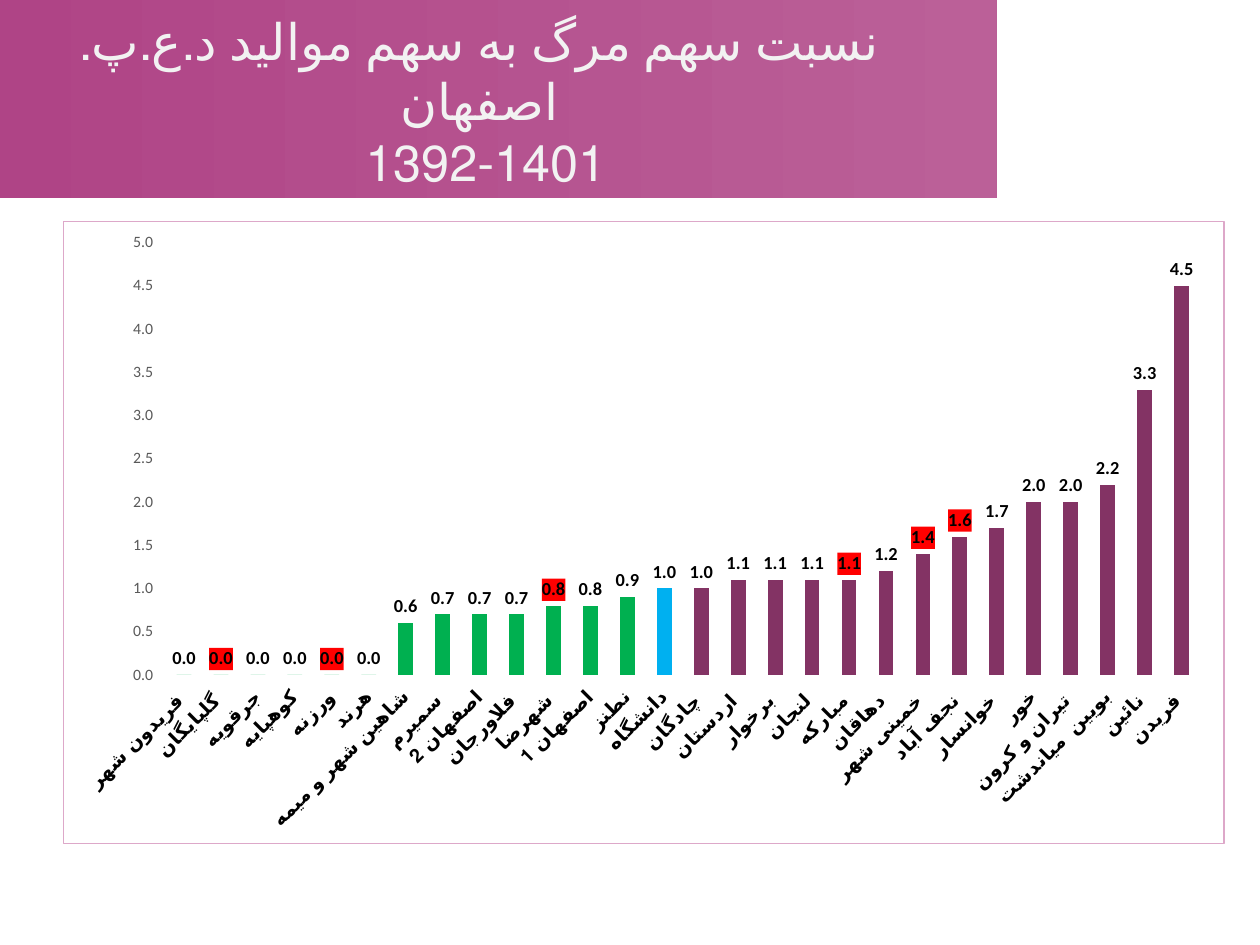
"""Build a slide with a title band and a column chart of death share to birth share by county."""
import lxml.etree
import pptx
import pptx.chart.data
import pptx.dml.color
import pptx.enum.chart
import pptx.enum.lang
import pptx.enum.shapes
import pptx.enum.text
import pptx.oxml
import pptx.oxml.ns
import pptx.util
from pptx.util import Inches

TITLE = "نسبت سهم مرگ به سهم موالید د.ع.پ.\vاصفهان\v1401-1392 \v"
UNIVERSITY = "دانشگاه"
RATIOS = [
    ("فریدون شهر ", 0), ("گلپایگان ", 0), ("جرقویه", 0), ("کوهپایه", 0),
    ("ورزنه", 0), ("هرند", 0), ("شاهین شهر و میمه", 0.6), ("سمیرم ", 0.7),
    ("اصفهان 2", 0.7), ("فلاورجان ", 0.7), ("شهرضا ", 0.8), ("اصفهان 1", 0.8),
    ("نطنز", 0.9), (UNIVERSITY, 1), ("چادگان ", 1), ("اردستان ", 1.1),
    ("برخوار ", 1.1), ("لنجان ", 1.1), ("مبارکه ", 1.1), ("دهاقان ", 1.2),
    ("خمینی شهر ", 1.4), ("نجف آباد ", 1.6), ("خوانسار ", 1.7), ("خور", 2),
    ("تیران و کرون ", 2), ("بویین  میاندشت", 2.2), ("نائین ", 3.3), ("فریدن ", 4.5),
]
FLAGGED = {"گلپایگان ", "ورزنه", "شهرضا ", "مبارکه ", "خمینی شهر ", "نجف آباد "}
COLORS = {
    "band_start": "AF4486", "band_end": "BB6098", "title": "F2F2F2",
    "low": "00B050", "university": "00B0F0", "high": "833364",
    "flag": "FF0000", "text": "000000", "axis": "595959",
    "paper": "FFFFFF", "border": "DDA8C9",
}
CHART_W, CHART_H = 9.22, 4.95
PLOT = {"x": 0.81 / CHART_W, "y": 0.17 / CHART_H, "w": 8.22 / CHART_W, "h": 3.44 / CHART_H}
FONT = "Calibri"
FORMAT = "0.0"


def rgb(name):
    return pptx.dml.color.RGBColor.from_string(COLORS[name])


def set_font(font, size, color, bold=False):
    font.name, font.size, font.bold = FONT, pptx.util.Pt(size), bold
    font.color.rgb = rgb(color)


def chart_xml(tag, content="", attrs=""):
    ns = pptx.oxml.ns.nsdecls("c", "a")
    return pptx.oxml.parse_xml(f"<c:{tag} {ns} {attrs}>{content}</c:{tag}>")


def solid(name):
    return f'<a:solidFill><a:srgbClr val="{COLORS[name]}"/></a:solidFill>'


def add_title(slide):
    band = slide.shapes.add_shape(
        pptx.enum.shapes.MSO_SHAPE.RECTANGLE, 0, 0, Inches(7.91), Inches(1.57))
    band.shadow.inherit = False
    band.line.fill.background()
    band.fill.gradient()
    band.fill.gradient_angle = 0
    for stop, name in zip(band.fill.gradient_stops, ("band_start", "band_end")):
        stop.color.rgb = rgb(name)

    box = slide.shapes.add_textbox(Inches(0.28), Inches(0.33), Inches(7.05), Inches(1.42))
    tf = box.text_frame
    tf.word_wrap = True
    tf.vertical_anchor = pptx.enum.text.MSO_ANCHOR.MIDDLE
    tf.text = TITLE
    p = tf.paragraphs[0]
    p.alignment = pptx.enum.text.PP_ALIGN.CENTER
    p._p.get_or_add_pPr().set("rtl", "1")
    set_font(p.font, 28.8, "title")
    for r in p.runs:
        set_font(r.font, 28.8, "title")
        r.font.language_id = pptx.enum.lang.MSO_LANGUAGE_ID.FARSI
    for br in p._p.xpath("a:br"):
        lxml.etree.SubElement(br, pptx.oxml.ns.qn("a:rPr"), sz="2880")


def style_axes(chart):
    cat, val = chart.category_axis, chart.value_axis
    for axis, size, color, bold in ((cat, 11, "text", True), (val, 9, "axis", False)):
        axis.has_major_gridlines = False
        axis.format.line.fill.background()
        set_font(axis.tick_labels.font, size, color, bold)
    cat._element.txPr.bodyPr.set("rot", str(-45 * 60000))
    val.minimum_scale, val.maximum_scale, val.major_unit = 0, 5, 0.5
    val.tick_labels.number_format = FORMAT
    val.tick_labels.number_format_is_linked = False


def style_columns(plot):
    outside = pptx.enum.chart.XL_LABEL_POSITION.OUTSIDE_END
    plot.gap_width = 150
    plot.vary_by_categories = False
    series = plot.series[0]
    labels = series.data_labels
    labels.show_value = True
    labels.number_format, labels.number_format_is_linked = FORMAT, False
    labels.position = outside
    set_font(labels.font, 10.5, "text", True)
    for i, (county, ratio) in enumerate(RATIOS):
        point = series.points[i]
        kind = "university" if county == UNIVERSITY else "low" if ratio < 1 else "high"
        point.format.fill.solid()
        point.format.fill.fore_color.rgb = rgb(kind)
        if county in FLAGGED:
            set_font(point.data_label.font, 10.5, "text", True)
            point.data_label.position = outside
            txpr = series._element.xpath(f"c:dLbls/c:dLbl[c:idx/@val={i}]/c:txPr")[0]
            txpr.addprevious(chart_xml("numFmt", attrs=f'formatCode="{FORMAT}" sourceLinked="0"'))
            txpr.addprevious(chart_xml("spPr", solid("flag")))


def add_ratio_chart(slide):
    data = pptx.chart.data.CategoryChartData(number_format=FORMAT)
    data.categories = [county for county, _ in RATIOS]
    data.add_series("Series 1", [ratio for _, ratio in RATIOS])
    chart = slide.shapes.add_chart(
        pptx.enum.chart.XL_CHART_TYPE.COLUMN_CLUSTERED,
        Inches(0.5), Inches(1.75), Inches(CHART_W), Inches(CHART_H), data).chart
    chart.has_title = False
    chart.has_legend = False
    set_font(chart.font, 10, "text")
    style_axes(chart)
    style_columns(chart.plots[0])

    space = chart._chartSpace
    frame = solid("paper") + f'<a:ln w="9525">{solid("border")}</a:ln>'
    space.xpath("c:txPr")[0].addprevious(chart_xml("spPr", frame))
    area = space.xpath("c:chart/c:plotArea")[0]
    for old in area.xpath("c:layout"):
        area.remove(old)
    modes = '<c:layoutTarget val="inner"/><c:xMode val="edge"/><c:yMode val="edge"/>'
    sizes = "".join(f'<c:{key} val="{value}"/>' for key, value in PLOT.items())
    area.insert(0, chart_xml("layout", f"<c:manualLayout>{modes}{sizes}</c:manualLayout>"))


def main():
    prs = pptx.Presentation()
    prs.slide_width, prs.slide_height = Inches(10), Inches(7.5)
    slide = prs.slides.add_slide(prs.slide_layouts[6])
    add_title(slide)
    add_ratio_chart(slide)
    prs.save("out.pptx")


if __name__ == "__main__":
    main()
